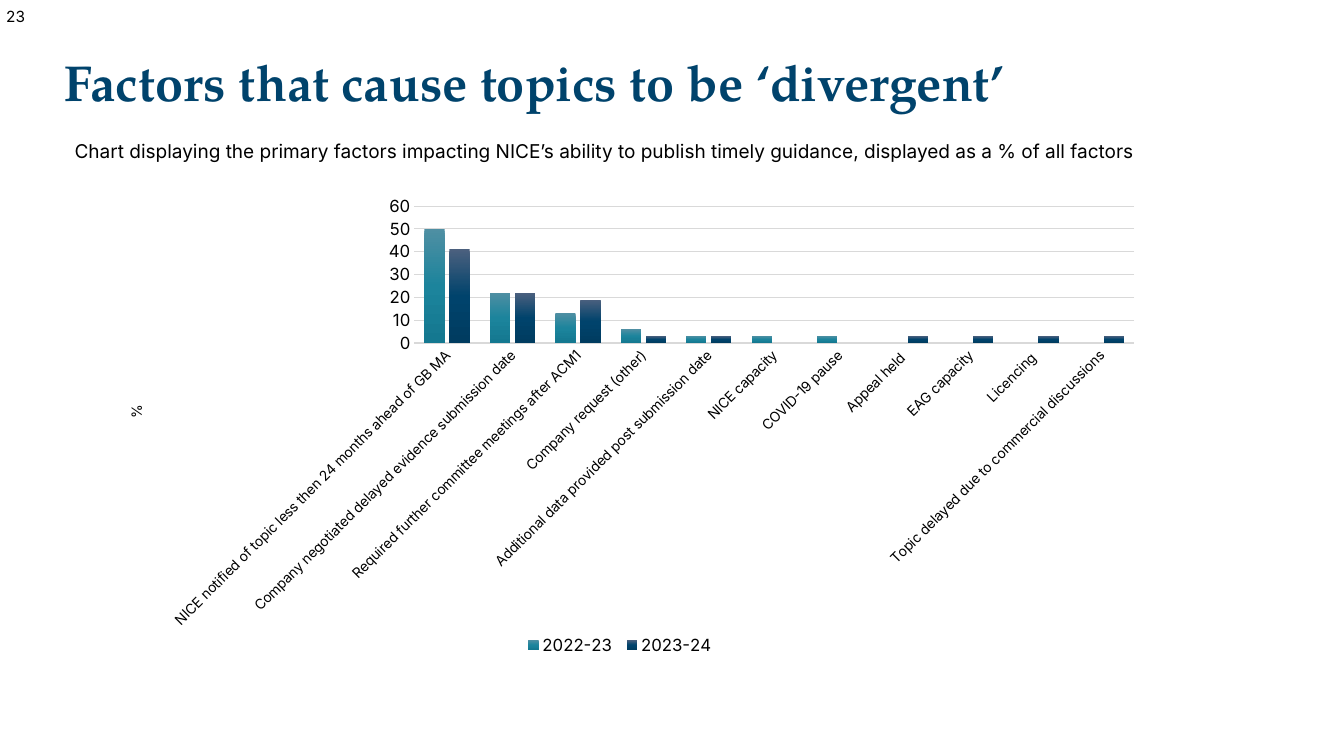
from copy import deepcopy

from pptx import Presentation
from pptx.chart.data import CategoryChartData
from pptx.dml.color import RGBColor
from pptx.enum.chart import XL_CHART_TYPE, XL_LEGEND_POSITION, XL_TICK_MARK
from pptx.enum.text import MSO_ANCHOR, PP_ALIGN
from pptx.oxml import parse_xml
from pptx.oxml.ns import nsdecls
from pptx.util import Inches, Pt

# Content
PAGE_NUMBER = "23"
TITLE = "Factors that cause topics to be ‘divergent’"
SUBTITLE = ("Chart displaying the primary factors impacting NICE’s ability to publish "
            "timely guidance, displayed as a % of all factors")
FACTORS = [  # factor, 2022-23, 2023-24
    ("NICE notified of topic less then 24 months ahead of GB MA", 50, 41),
    ("Company negotiated delayed evidence submission date", 22, 22),
    ("Required further committee meetings after ACM1", 13, 19),
    ("Company request (other)", 6, 3),
    ("Additional data provided post submission date", 3, 3),
    ("NICE capacity", 3, 0),
    ("COVID-19 pause", 3, 0),
    ("Appeal held ", 0, 3),
    ("EAG capacity", 0, 3),
    ("Licencing ", 0, 3),
    ("Topic delayed due to commercial discussions", 0, 3),
]
YEARS = {
    "2022-23": ("4F8FA3", "1C849C", "147890"),
    "2023-24": ("4B607E", "00436C", "003C60"),
}
CHART_WIDTH, CHART_HEIGHT = 10.46, 4.63
BODY_FONT, TITLE_FONT = "Inter", "TeX Gyre Pagella"
BLACK, NAVY, GREY = "000000", "00436C", "D9D9D9"


def color(value):
    return RGBColor.from_string(value)


def style(font, size, name=BODY_FONT, tint=BLACK, bold=False):
    font.size, font.name, font.bold = Pt(size), name, bold
    font.color.rgb = color(tint)


def place(shape, left, top, width, height):
    shape.left, shape.top = Inches(left), Inches(top)
    shape.width, shape.height = Inches(width), Inches(height)


def write(box, text, align, spacing, **font):
    frame = box.text_frame
    frame.text = text
    frame.word_wrap = True
    frame.vertical_anchor = MSO_ANCHOR.TOP
    para = frame.paragraphs[0]
    para.alignment, para.line_spacing = align, spacing
    para.space_before = Pt(0)
    style(para.runs[0].font, **font)


def arrange(part, after, left, top, width=None, height=None, target=""):
    """Fix a chart part at a place given in inches inside the chart."""
    for layout in part.xpath("./c:layout"):
        part.remove(layout)
    shares = {"x": left / CHART_WIDTH, "y": top / CHART_HEIGHT}
    if width:
        shares.update(w=width / CHART_WIDTH, h=height / CHART_HEIGHT)
    sizes = "".join(f'<c:{key} val="{share:.4f}"/>' for key, share in shares.items())
    part.insert(after, parse_xml(
        f'<c:layout {nsdecls("c")}><c:manualLayout>{target}'
        f'<c:xMode val="edge"/><c:yMode val="edge"/>{sizes}</c:manualLayout></c:layout>'))


deck = Presentation()
deck.slide_width, deck.slide_height = Inches(13.33), Inches(7.5)
page = deck.slides.add_slide(deck.slide_layouts[1])

# Title, subtitle and page number
title, subtitle = page.placeholders
place(title, 0.54, 0.53, 10.6, 0.84)
write(title, TITLE, PP_ALIGN.LEFT, 0.9, size=36, name=TITLE_FONT, tint=NAVY, bold=True)

place(subtitle, 0.64, 1.38, 11.19, 0.44)
write(subtitle, SUBTITLE, PP_ALIGN.LEFT, 0.8, size=13.6)
para_format = subtitle.element.xpath(".//a:pPr")[0]
para_format.set("marL", "0")
para_format.set("indent", "0")
para_format.append(parse_xml(f"<a:buNone {nsdecls('a')}/>"))

number = page.shapes.add_textbox(Inches(-0.07), Inches(0.02), Inches(0.45), Inches(0.4))
write(number, PAGE_NUMBER, PP_ALIGN.CENTER, 1, size=11)

# Column chart
data = CategoryChartData()
names, *columns = zip(*FACTORS)
data.categories = names
for year, values in zip(YEARS, columns):
    data.add_series(year, values)
chart = page.shapes.add_chart(XL_CHART_TYPE.COLUMN_CLUSTERED, Inches(1), Inches(1.94),
                              Inches(CHART_WIDTH), Inches(CHART_HEIGHT), data).chart
style(chart.font, 10)
chart.has_title = False
chart.has_legend = True
chart.legend.position = XL_LEGEND_POSITION.BOTTOM
chart.legend.include_in_layout = False
style(chart.legend.font, 12)

plot = chart.plots[0]
plot.vary_by_categories = False
plot.gap_width, plot.overlap = 100, -24

# Three-stop gradient, top to bottom, for each year
for series, tints in zip(plot.series, YEARS.values()):
    fill = series.format.fill
    fill.gradient()
    fill.gradient_angle = 270
    stops = chart.element.xpath(".//c:ser//a:gsLst")[-1]
    stops.insert(1, deepcopy(stops[0]))
    for stop, tint, position in zip(fill.gradient_stops, tints, (0, 0.5, 1)):
        stop.color.rgb = color(tint)
        stop.position = position

# Axes
factor_axis, percent_axis = chart.category_axis, chart.value_axis
for axis, size in ((factor_axis, 10), (percent_axis, 12)):
    axis.major_tick_mark = axis.minor_tick_mark = XL_TICK_MARK.NONE
    style(axis.tick_labels.font, size)
factor_axis.format.line.color.rgb = color(GREY)
factor_axis.format.line.width = Pt(1)
chart.element.xpath(".//c:catAx/c:txPr/a:bodyPr")[0].set("rot", "-2700000")

percent_axis.minimum_scale, percent_axis.maximum_scale = 0, 60
percent_axis.major_unit = 10
percent_axis.format.line.fill.background()
percent_axis.major_gridlines.format.line.color.rgb = color(GREY)
percent_axis.major_gridlines.format.line.width = Pt(0.75)
axis_title = percent_axis.axis_title.text_frame
axis_title.text = "%"
style(axis_title.paragraphs[0].runs[0].font, 10)
chart.element.xpath(".//c:valAx/c:title//a:bodyPr")[0].set("rot", "-5400000")

# Fixed places for the plot, axis title and legend
arrange(chart.element.xpath(".//c:plotArea")[0], 0, 3.11, 0.1, 7.14, 1.36,
        '<c:layoutTarget val="inner"/>')
arrange(chart.element.xpath(".//c:valAx/c:title")[0], 1, 0.23, 2.05)
arrange(chart.element.xpath(".//c:legend")[0], 1, 4.15, 4.29, 2, 0.35)

deck.save("out.pptx")
